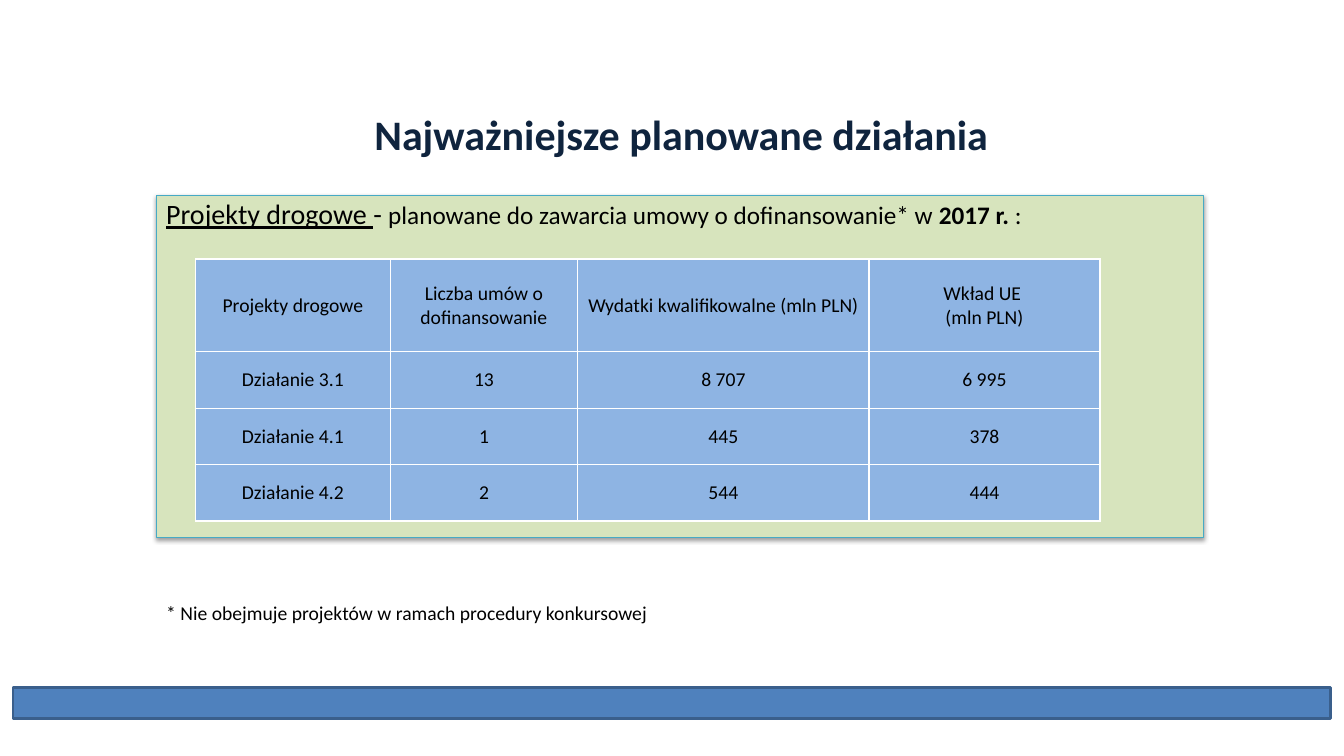
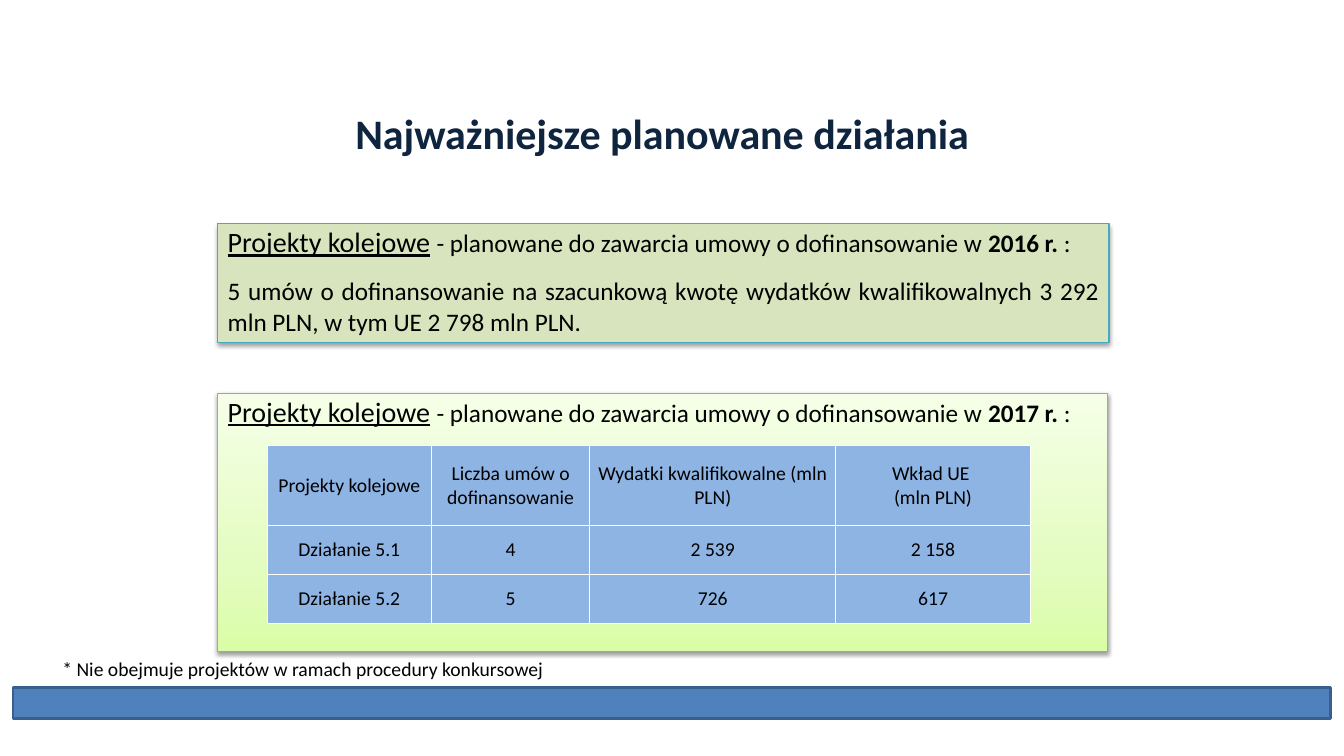
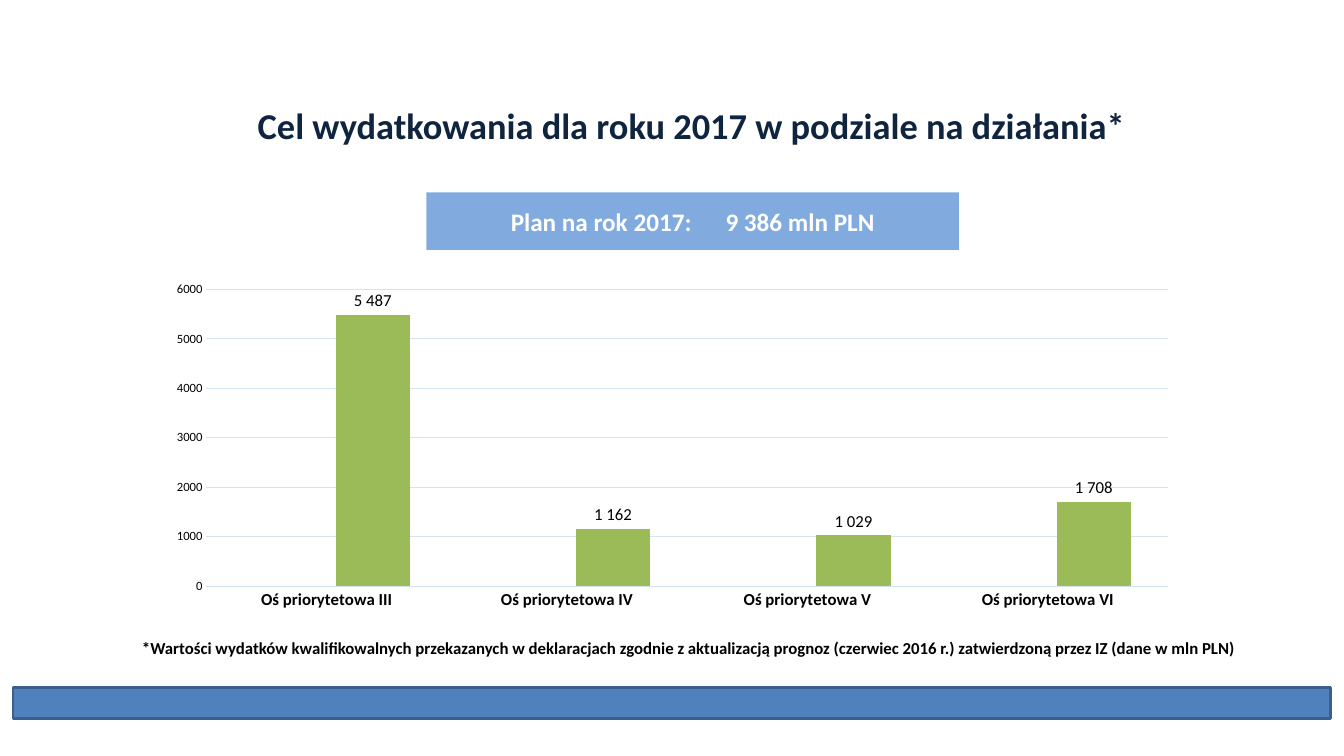
from lxml import etree
from pptx import Presentation
from pptx.chart.data import CategoryChartData
from pptx.dml.color import RGBColor
from pptx.enum.chart import XL_CHART_TYPE as ChartType, XL_LABEL_POSITION as LabelPos
from pptx.enum.chart import XL_TICK_MARK as TickMark
from pptx.enum.shapes import MSO_SHAPE as Shape
from pptx.enum.text import MSO_ANCHOR as Anchor, MSO_AUTO_SIZE as AutoSize, PP_ALIGN as Align
from pptx.oxml import parse_xml
from pptx.oxml.ns import nsdecls, qn
from pptx.util import Emu, Pt

# Shared look; 100 px make one inch
PX = 9144
FONT = "Calibri"
BLACK = RGBColor(0x00, 0x00, 0x00)
WHITE = RGBColor(0xFF, 0xFF, 0xFF)
NAVY = RGBColor(0x0F, 0x24, 0x3E)
BAND = RGBColor(0x4F, 0x81, 0xBD)
BAND_LINE = RGBColor(0x3A, 0x5F, 0x8C)
OLIVE = RGBColor(0xD7, 0xE4, 0xBD)
TEAL = RGBColor(0x46, 0xAA, 0xC5)
LIME_LINE = RGBColor(0x98, 0xB9, 0x55)
LIME_STOPS = [(0, "DAFDA7"), (35, "E4FCC2"), (100, "F5FFE7")]
CELL = RGBColor(0x8E, 0xB4, 0xE3)
PLAN = RGBColor(0x55, 0x8E, 0xD5)
BAR = RGBColor(0x9B, 0xBB, 0x59)
GRID = RGBColor(0xD4, 0xE3, 0xF4)

# Content
ACTIONS = "Najważniejsze planowane działania"
FOOTNOTE = "* Nie obejmuje projektów w ramach procedury konkursowej"
HEADERS = ["Liczba umów o dofinansowanie", "Wydatki kwalifikowalne (mln PLN)",
           "Wkład UE \n(mln PLN)"]
ROAD_ROWS = [
    ["Projekty drogowe", *HEADERS],
    ["Działanie 3.1", "13", "8 707", "6 995"],
    ["Działanie 4.1", "1", "445", "378"],
    ["Działanie 4.2", "2", "544", "444"],
]
RAIL_ROWS = [
    ["Projekty kolejowe", *HEADERS],
    ["Działanie 5.1", "4", "2 539", "2 158"],
    ["Działanie 5.2", "5", "726", "617"],
]
ROAD_LEAD = ("Projekty drogowe ", "- ", "planowane do zawarcia umowy o dofinansowanie* w ", "2017 r.")
RAIL_LEAD = ("Projekty kolejowe", " ", "- planowane do zawarcia umowy o dofinansowanie w ")
RAIL_2016 = ("5 umów o dofinansowanie na szacunkową kwotę wydatków kwalifikowalnych "
             "3 292 mln PLN, w tym UE 2 798 mln PLN.")
GOAL = "Cel wydatkowania dla roku 2017 w podziale na działania*"
GOAL_NOTE = ("*Wartości wydatków kwalifikowalnych przekazanych w deklaracjach zgodnie z aktualizacją "
             "prognoz (czerwiec 2016 r.) zatwierdzoną przez IZ (dane w mln PLN)")
PLAN_TEXT = ("Plan na rok 2017:", " ", "9 386 mln PLN")
AXES = [("Oś priorytetowa III", 5487), ("Oś priorytetowa IV", 1162),
        ("Oś priorytetowa V", 1029), ("Oś priorytetowa VI", 1708)]


def px(*lengths):
    return [Emu(n * PX) for n in lengths]


def style(font, size, color=BLACK, bold=False):
    font.name, font.size, font.bold = FONT, Pt(size), bold
    font.color.rgb = color


def add_run(p, text, size, color=BLACK, bold=False, underline=False):
    r = p.add_run()
    r.text = text
    style(r.font, size, color, bold)
    r.font.underline = underline
    return r


def new_slide(prs, title, box, size):
    """Slide with the bottom band and a formatted title."""
    s = prs.slides.add_slide(prs.slide_layouts[5])
    band = add_block(s, Shape.FLOWCHART_PROCESS, (13, 682, 1307, 31), BAND)
    band.line.color.rgb, band.line.width = BAND_LINE, Pt(2)
    sp = s.shapes.title
    sp.left, sp.top, sp.width, sp.height = px(*box)
    tf = sp.text_frame
    tf.auto_size, tf.vertical_anchor, tf.word_wrap = AutoSize.NONE, Anchor.TOP, True
    p = tf.paragraphs[0]
    p.alignment = Align.CENTER
    add_run(p, title, size, NAVY, True)
    return s


def add_block(s, kind, box, color):
    sp = s.shapes.add_shape(kind, *px(*box))
    sp.shadow.inherit = False
    sp.fill.solid()
    sp.fill.fore_color.rgb = color
    sp.line.fill.background()
    return sp


def add_panel(s, box, lead, line, body=None):
    """Shadowed panel: underlined topic, plain middle, bold year."""
    sp = add_block(s, Shape.RECTANGLE, box, OLIVE)
    sp.line.color.rgb, sp.line.width = line, Pt(0.75)
    effects = sp._element.spPr.find(qn("a:effectLst"))
    effects.append(parse_xml(
        f'<a:outerShdw {nsdecls("a")} blurRad="{Pt(3.1)}" dist="{Pt(1.6)}" dir="5400000" '
        'rotWithShape="0"><a:srgbClr val="000000"><a:alpha val="38000"/></a:srgbClr></a:outerShdw>'))
    tf = sp.text_frame
    tf.word_wrap, tf.vertical_anchor = True, Anchor.TOP
    p = tf.paragraphs[0]
    p.alignment, p.line_spacing = Align.JUSTIFY, 0.9
    topic, dash, middle, year = lead
    add_run(p, topic, 20, underline=True)
    add_run(p, dash, 20)
    add_run(p, middle, 18)
    add_run(p, year, 18, bold=True)
    add_run(p, " :", 18)
    if body:
        p.space_after = Pt(12)
        p = tf.add_paragraph()
        p.alignment = Align.JUSTIFY
        add_run(p, body, 18)
    return sp


def fill_lime(sp):
    stops = "".join(f'<a:gs pos="{pos * 1000}"><a:srgbClr val="{c}"/></a:gs>' for pos, c in LIME_STOPS)
    solid = sp._element.spPr.find(qn("a:solidFill"))
    solid.getparent().replace(solid, parse_xml(
        f'<a:gradFill {nsdecls("a")} rotWithShape="1"><a:gsLst>{stops}</a:gsLst>'
        '<a:lin ang="16200000" scaled="0"/></a:gradFill>'))


def add_grid(s, left, top, widths, head, row, rows):
    heights = [head] + [row] * (len(rows) - 1)
    table = s.shapes.add_table(len(rows), len(widths),
                               *px(left, top, sum(widths), sum(heights))).table
    table.first_row = table.horz_banding = False
    for col, w in zip(table.columns, widths):
        col.width = Emu(w * PX)
    for line, h, texts in zip(table.rows, heights, rows):
        line.height = Emu(h * PX)
        for cell, text in zip(line.cells, texts):
            cell.text = text
            cell.vertical_anchor = Anchor.MIDDLE
            cell.margin_left, cell.margin_right, cell.margin_top, cell.margin_bottom = px(7, 7, 0, 0)
            for p in cell.text_frame.paragraphs:
                p.alignment = Align.CENTER
                style(p.runs[0].font, 14)
            for side in "LRTB":
                cell._tc.get_or_add_tcPr().append(parse_xml(
                    f'<a:ln{side} {nsdecls("a")} w="12700"><a:solidFill>'
                    f'<a:srgbClr val="{WHITE}"/></a:solidFill></a:ln{side}>'))
            cell.fill.solid()
            cell.fill.fore_color.rgb = CELL


def add_note(s, box, text, size, bold=False):
    tf = s.shapes.add_textbox(*px(*box)).text_frame
    tf.word_wrap = True
    add_run(tf.paragraphs[0], text, size, bold=bold)


def add_plan(s, box):
    sp = add_block(s, Shape.RECTANGLE, box, PLAN)
    color = sp._element.spPr.find(qn("a:solidFill"))[0]
    etree.SubElement(color, qn("a:alpha")).set("val", "74000")
    sp.text_frame.vertical_anchor = Anchor.MIDDLE
    p = sp.text_frame.paragraphs[0]
    p.alignment = Align.CENTER
    label, gap, amount = [add_run(p, text, 18, WHITE, True) for text in PLAN_TEXT]
    gap._r.get_or_add_rPr().set("spc", "2000")  # widens the gap before the amount


def add_goal_chart(s, box):
    data = CategoryChartData()
    data.categories = [name for name, _ in AXES]
    data.add_series("Series 1", [None] * len(AXES))
    data.add_series("Series 2", [value for _, value in AXES])
    chart = s.shapes.add_chart(ChartType.COLUMN_CLUSTERED, *px(*box), data).chart
    chart.has_legend = chart.has_title = False
    style(chart.font, 10)
    plot = chart.plots[0]
    plot.gap_width, plot.overlap, plot.vary_by_categories = 100, -24, False
    for series in plot.series:
        series.format.fill.solid()
        series.format.fill.fore_color.rgb = BAR
    labels = plot.series[1].data_labels
    labels.show_value, labels.position = True, LabelPos.OUTSIDE_END
    labels.number_format, labels.number_format_is_linked = '#" "##0', False
    style(labels.font, 12)
    # Axes
    cat, val = chart.category_axis, chart.value_axis
    for axis in (cat, val):
        axis.major_tick_mark = axis.minor_tick_mark = TickMark.NONE
    style(cat.tick_labels.font, 12, bold=True)
    style(val.tick_labels.font, 9)
    val.minimum_scale, val.maximum_scale, val.major_unit = 0, 6000, 1000
    val.format.line.fill.background()
    for line in (cat.format.line, val.major_gridlines.format.line):
        line.color.rgb, line.width = GRID, Pt(0.75)


def main():
    prs = Presentation()
    prs.slide_width, prs.slide_height = px(1333, 750)

    # Road projects
    s = new_slide(prs, ACTIONS, (226, 103, 900, 91), 30)
    add_panel(s, (155, 194, 1039, 339), ROAD_LEAD, TEAL)
    add_grid(s, 194, 257, [193, 186, 289, 229], 92, 56, ROAD_ROWS)
    add_note(s, (155, 591, 772, 34), FOOTNOTE, 14)

    # Rail projects
    s = new_slide(prs, ACTIONS, (207, 102, 900, 91), 30)
    add_panel(s, (216, 222, 884, 118), (*RAIL_LEAD, "2016 r."), TEAL, RAIL_2016)
    fill_lime(add_panel(s, (216, 390, 883, 256), (*RAIL_LEAD, "2017 r."), LIME_LINE))
    add_grid(s, 265, 442, [163, 157, 244, 193], 79, 49, RAIL_ROWS)
    add_note(s, (52, 647, 772, 34), FOOTNOTE, 14)

    # Spending goal
    s = new_slide(prs, GOAL, (206, 97, 961, 79), 26)
    add_note(s, (131, 628, 1142, 30), GOAL_NOTE, 12, True)
    add_plan(s, (423, 191, 528, 57))
    add_goal_chart(s, (155, 273, 1024, 339))

    prs.save("out.pptx")


if __name__ == "__main__":
    main()
